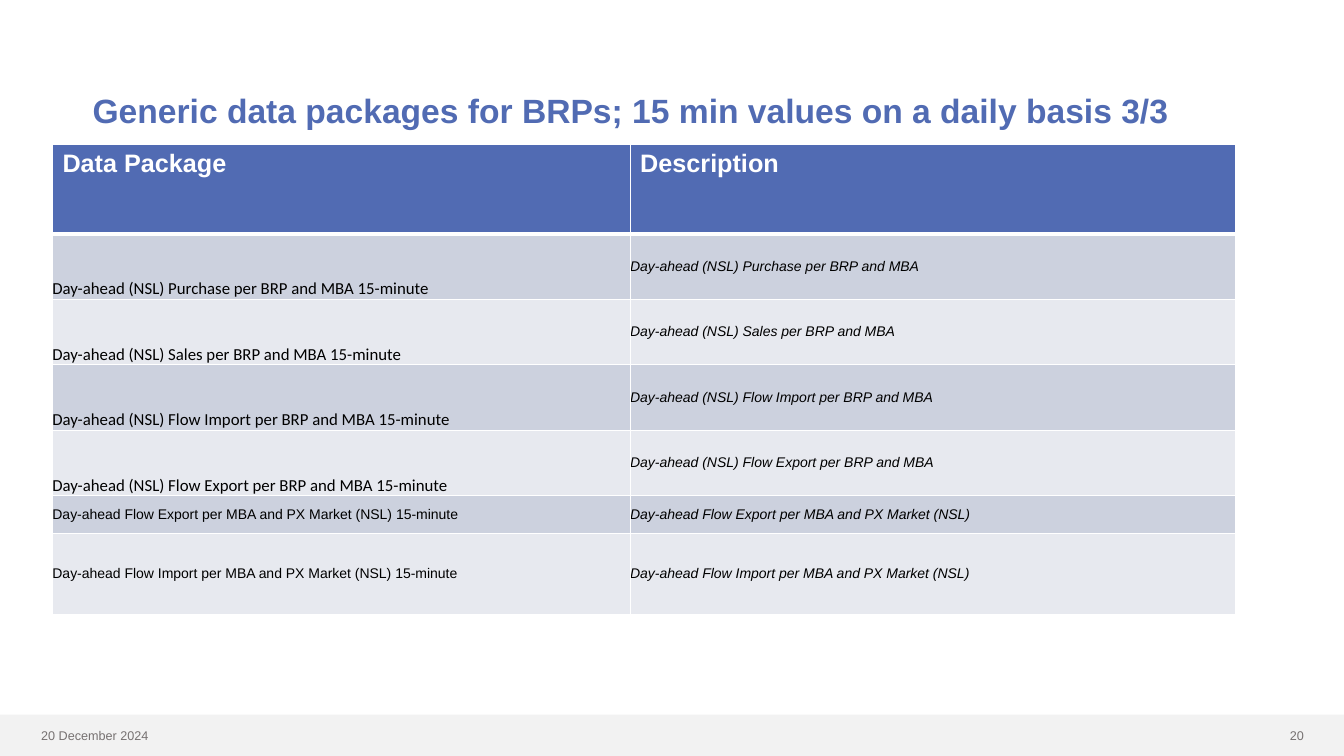
from lxml.etree import SubElement
from pptx import Presentation
from pptx.dml.color import RGBColor
from pptx.enum.shapes import MSO_SHAPE
from pptx.enum.text import MSO_ANCHOR, PP_ALIGN
from pptx.oxml.ns import qn
from pptx.util import Inches, Pt

BLUE, WHITE, BLACK, GREY = "516BB3", "FFFFFF", "000000", "767171"
BANDS = ["CCD1DE", "E7E9EF"]
COLUMN_WIDTHS = [5.73, 6]
ROW_HEIGHTS = [0.89] + [0.65] * 4 + [0.37, 0.81]
HEADERS = ["Data Package", "Description"]
BRP_PACKAGES = [f"Day-ahead (NSL) {item} per BRP and MBA"
                for item in ("Purchase", "Sales", "Flow Import", "Flow Export")]
MARKET_PACKAGES = [f"Day-ahead Flow {way} per MBA and PX Market (NSL)"
                   for way in ("Export", "Import")]


def paint(fill, color):
    """Give a fill one solid colour."""
    fill.solid()
    fill.fore_color.rgb = RGBColor.from_string(color)


def add_span(para, text, size, color, bold=False, italic=False, font="Arial"):
    """Add one formatted run to a paragraph."""
    span = para.add_run()
    span.text = text
    span.font.name = font
    span.font.size = Pt(size)
    span.font.bold = bold
    span.font.italic = italic
    span.font.color.rgb = RGBColor.from_string(color)


def add_text(page, place, text, size, color, bold=False,
             align=PP_ALIGN.LEFT, anchor=MSO_ANCHOR.TOP):
    """Add a wrapped text box holding one paragraph."""
    box = page.shapes.add_textbox(*map(Inches, place))
    box.text_frame.word_wrap = True
    box.text_frame.vertical_anchor = anchor
    para = box.text_frame.paragraphs[0]
    para.alignment = align
    add_span(para, text, size, color, bold)
    return para


def add_footer(page):
    """Add the footer band with the date and the page number."""
    band = page.shapes.add_shape(MSO_SHAPE.RECTANGLE, *map(Inches, (0, 7.09, 13.33, 0.41)))
    band.shadow.inherit = False
    paint(band.fill, "F2F2F2")
    band.line.fill.background()
    add_text(page, (12.21, 7.17, 0.82, 0.25), "20", 9, GREY, align=PP_ALIGN.RIGHT)
    add_text(page, (0.31, 7.17, 2.12, 0.25), "20 December 2024", 9, GREY)


def set_borders(cell, top=1, bottom=1):
    """Draw white borders round a cell, with widths in points."""
    properties = cell._tc.get_or_add_tcPr()
    for side, width in (("L", 1), ("R", 1), ("T", top), ("B", bottom)):
        line = SubElement(properties, qn(f"a:ln{side}"), w=str(Pt(width)))
        fill = SubElement(line, qn("a:solidFill"))
        SubElement(fill, qn("a:srgbClr"), val=WHITE)


def fill_header(cell, text):
    """Write one heading cell."""
    set_borders(cell, bottom=3)
    paint(cell.fill, BLUE)
    add_span(cell.text_frame.paragraphs[0], text, 18, WHITE, bold=True)


def fill_body(cell, text, band, top, anchor=MSO_ANCHOR.MIDDLE, size=10, **style):
    """Write one body cell without margins."""
    set_borders(cell, top=top)
    paint(cell.fill, band)
    cell.margin_left = cell.margin_right = cell.margin_top = cell.margin_bottom = 0
    cell.vertical_anchor = anchor
    add_span(cell.text_frame.paragraphs[0], text, size, BLACK, **style)


def add_package_table(page):
    """Add the table of data packages and their descriptions."""
    frame = page.shapes.add_table(
        len(ROW_HEIGHTS), len(COLUMN_WIDTHS), Inches(0.52), Inches(1.43),
        Inches(sum(COLUMN_WIDTHS)), Inches(sum(ROW_HEIGHTS)))
    table = frame.table
    for column, width in zip(table.columns, COLUMN_WIDTHS):
        column.width = Inches(width)
    for row, height in zip(table.rows, ROW_HEIGHTS):
        row.height = Inches(height)
    for index, header in enumerate(HEADERS):
        fill_header(table.cell(0, index), header)
    brp_style = {"anchor": MSO_ANCHOR.BOTTOM, "size": 12, "font": "Calibri"}
    for index, package in enumerate(BRP_PACKAGES + MARKET_PACKAGES):
        style = brp_style if package in BRP_PACKAGES else {}
        band = BANDS[index % 2]
        top = 3 if index == 0 else 1
        fill_body(table.cell(index + 1, 0), f"{package} 15-minute", band, top, **style)
        fill_body(table.cell(index + 1, 1), package, band, top, italic=True)


def main():
    """Build and save the slide."""
    deck = Presentation()
    deck.slide_width, deck.slide_height = Inches(13.33), Inches(7.5)
    page = deck.slides.add_slide(deck.slide_layouts[6])
    add_footer(page)
    title = add_text(page, (0.82, 0.39, 11.73, 1.45),
                     "Generic data packages for BRPs; 15 min values on a daily basis 3/3",
                     24, BLUE, bold=True, anchor=MSO_ANCHOR.MIDDLE)
    title.line_spacing = 0.9
    add_package_table(page)
    deck.save("out.pptx")


if __name__ == "__main__":
    main()
